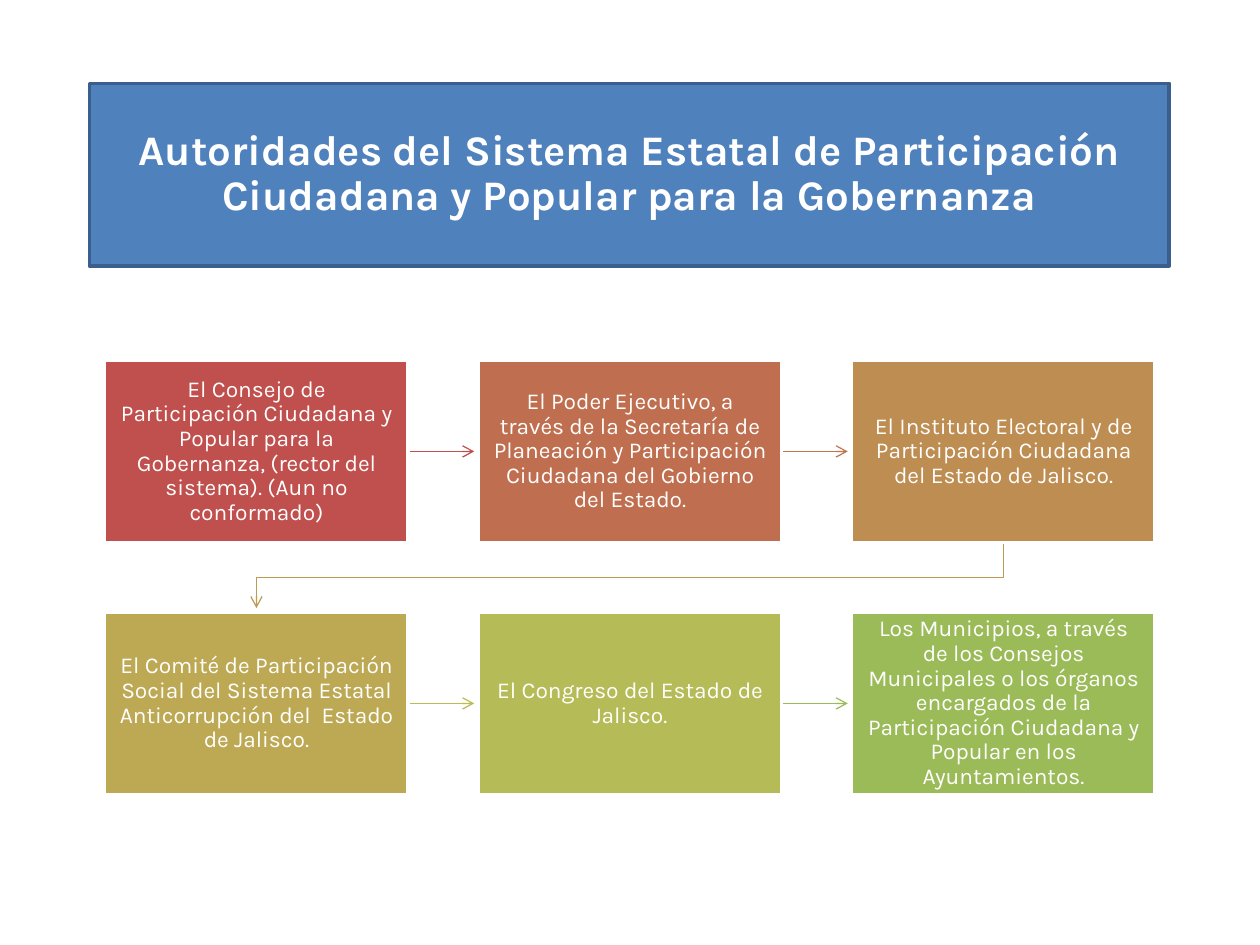
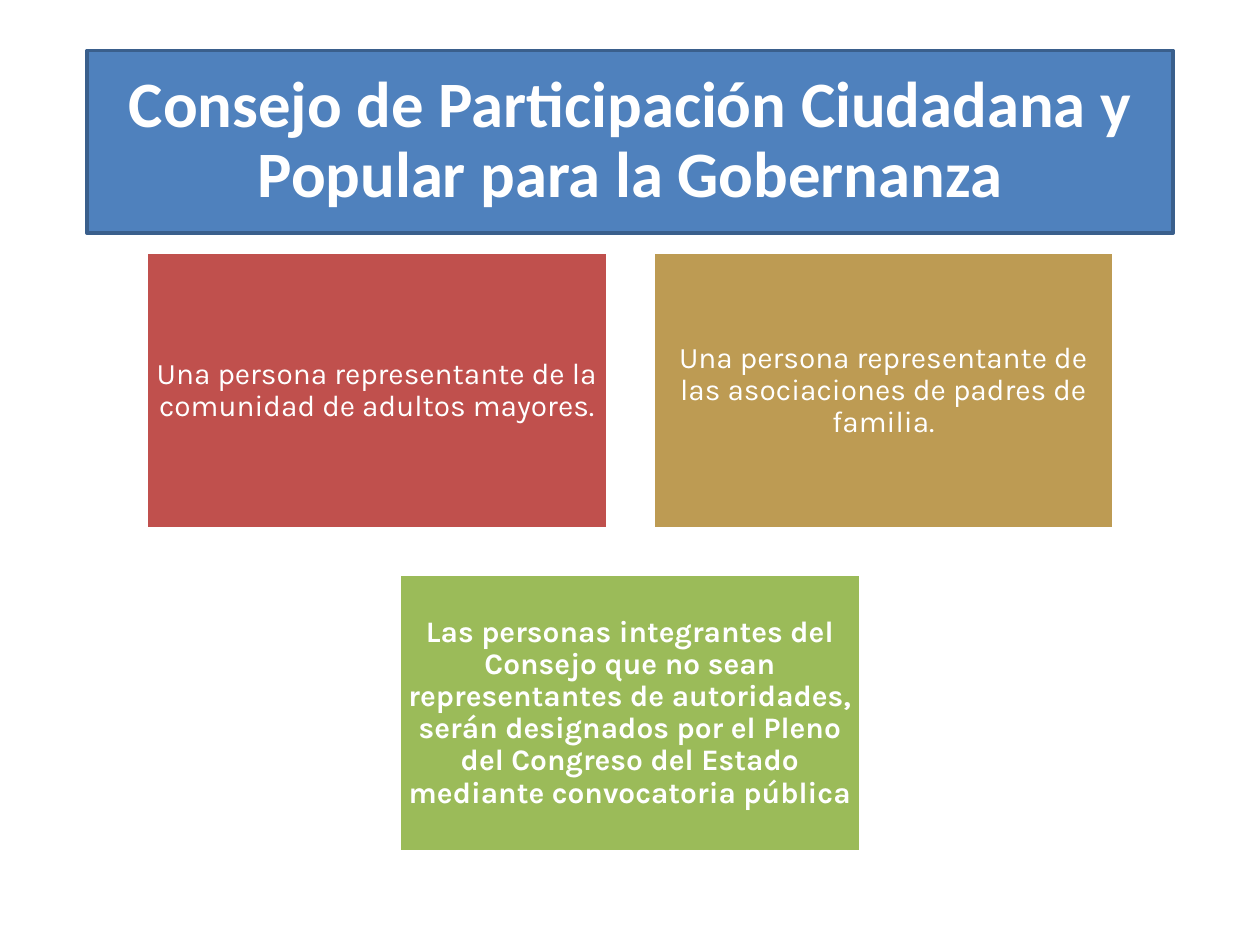
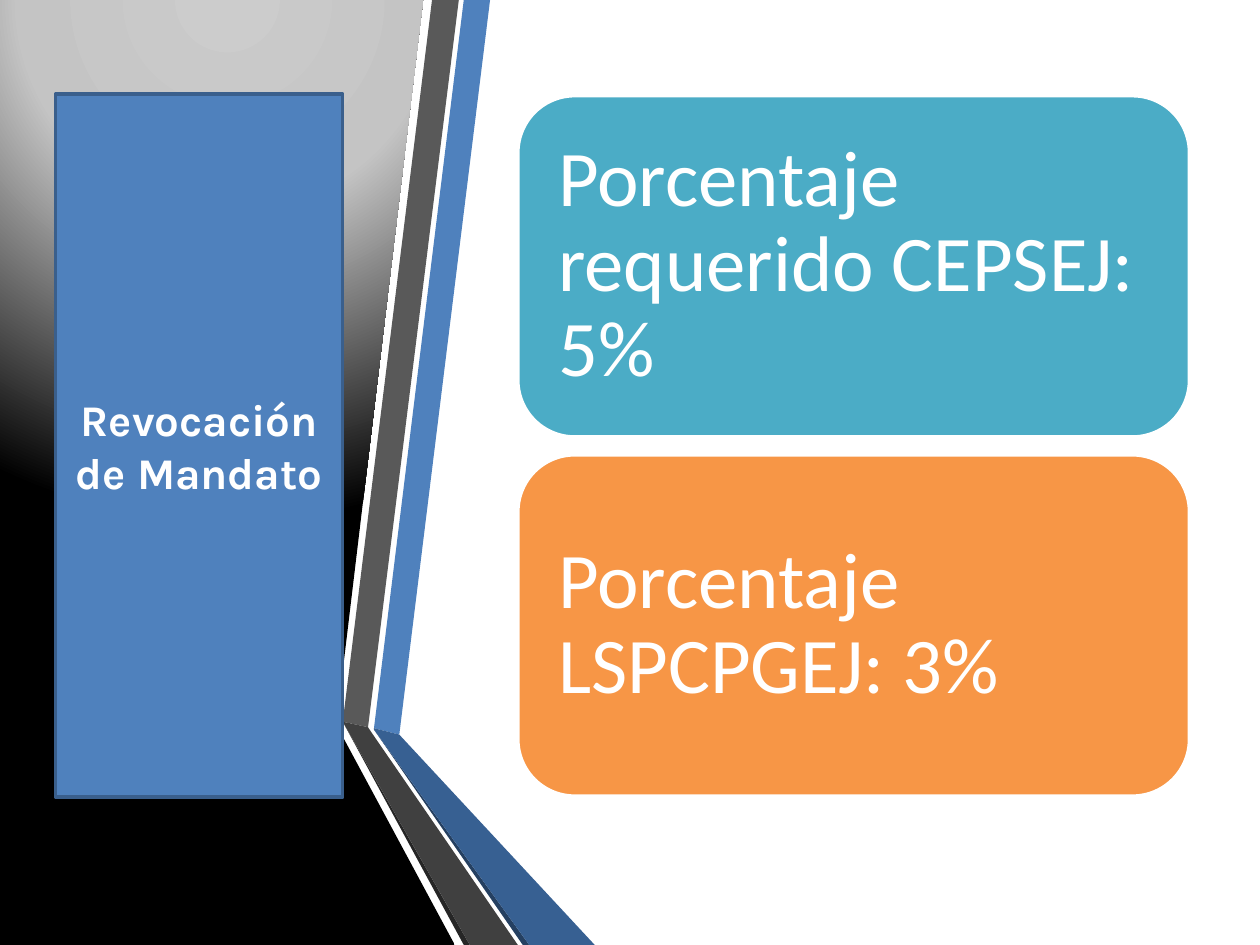
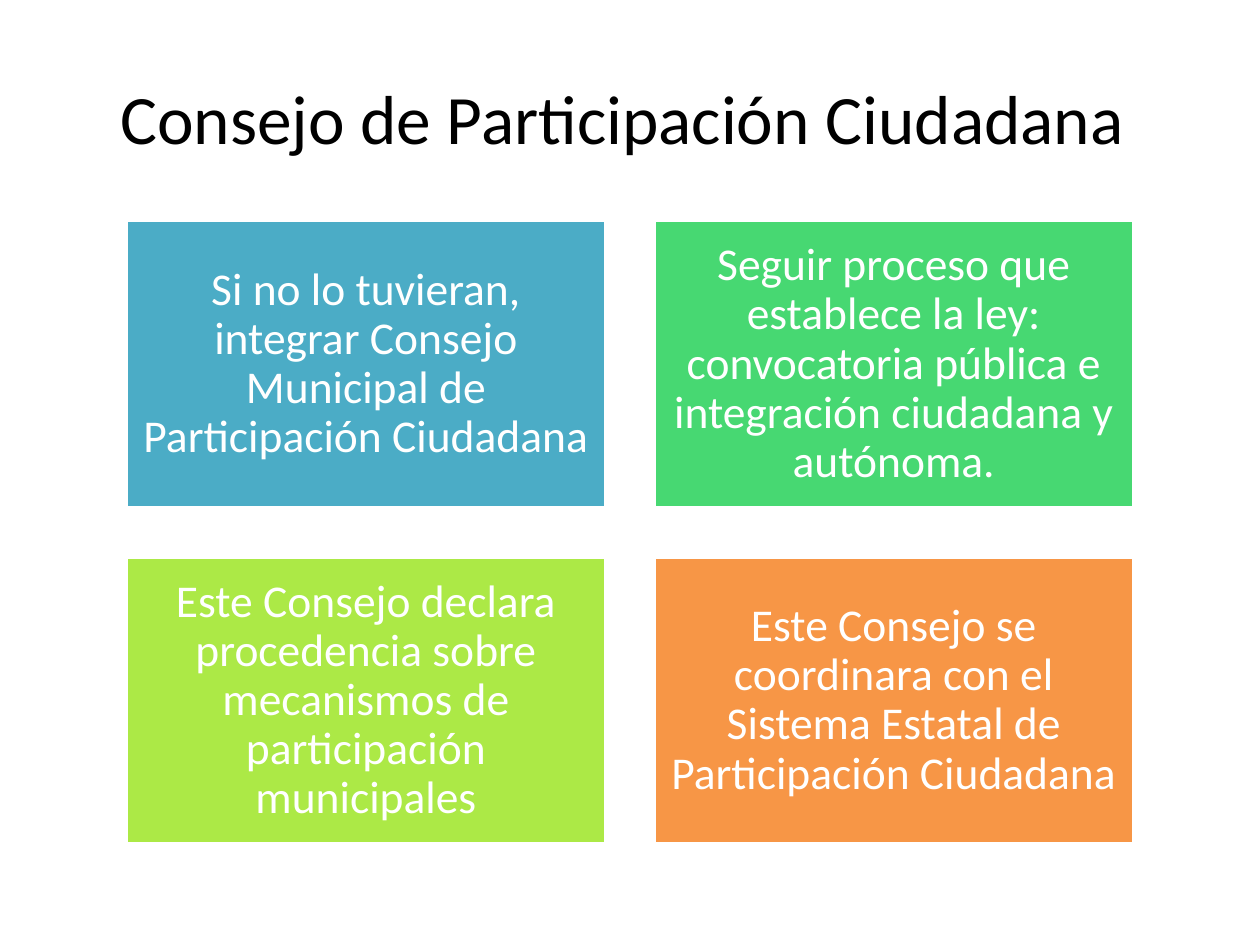
from pptx import Presentation
from pptx.dml.color import RGBColor
from pptx.enum.shapes import MSO_CONNECTOR, MSO_SHAPE
from pptx.enum.text import MSO_ANCHOR, MSO_AUTO_SIZE, PP_ALIGN
from pptx.oxml import parse_xml
from pptx.oxml.ns import nsdecls, qn
from pptx.oxml.xmlchemy import OxmlElement
from pptx.util import Cm, Pt

WHITE = RGBColor(0xFF, 0xFF, 0xFF)
BLACK = RGBColor(0x00, 0x00, 0x00)
BLUE = RGBColor(0x4F, 0x81, 0xBD)
EDGE = RGBColor(0x3A, 0x5F, 0x8C)
DEEP = RGBColor(0x37, 0x60, 0x92)
NAVY = RGBColor(0x25, 0x40, 0x61)
GREY = RGBColor(0x59, 0x59, 0x59)
SLATE = RGBColor(0x40, 0x40, 0x40)
COAL = RGBColor(0x26, 0x26, 0x26)
RED = RGBColor(0xC0, 0x50, 0x4D)
RUST = RGBColor(0xBF, 0x6F, 0x4F)
CLAY = RGBColor(0xBF, 0x77, 0x50)
BRONZE = RGBColor(0xBE, 0x8D, 0x52)
GOLD = RGBColor(0xBD, 0x9B, 0x53)
SAND = RGBColor(0xBD, 0xA9, 0x54)
MOSS = RGBColor(0xB5, 0xBC, 0x57)
STRAW = RGBColor(0xBC, 0xBC, 0x56)
GREEN = RGBColor(0x9B, 0xBB, 0x59)
TEAL = RGBColor(0x4B, 0xAC, 0xC6)
MINT = RGBColor(0x47, 0xD8, 0x72)
LIME = RGBColor(0xAC, 0xE9, 0x46)
ORANGE = RGBColor(0xF7, 0x96, 0x46)
KARLA, CALIBRI = "Karla", "Calibri"


def write(frame, text, size, font=KARLA, color=WHITE, bold=False,
          align=PP_ALIGN.CENTER, space=0.9, inset=None):
    frame.word_wrap = True
    frame.auto_size = MSO_AUTO_SIZE.NONE
    frame.vertical_anchor = MSO_ANCHOR.MIDDLE
    if inset is not None:
        frame.margin_left = frame.margin_right = Cm(inset)
        frame.margin_top = frame.margin_bottom = Cm(inset)
    para = frame.paragraphs[0]
    para.alignment = align
    para.line_spacing = space
    run = para.add_run()
    run.text = text
    run.font.size = Pt(size)
    run.font.name = font
    run.font.bold = bold
    run.font.color.rgb = color


def card(slide, spot, text, hue, kind=MSO_SHAPE.RECTANGLE, **style):
    """Add a filled box with a white edge; spot is left, top, width, height in cm."""
    shape = slide.shapes.add_shape(kind, *map(Cm, spot))
    shape.shadow.inherit = False
    shape.fill.solid()
    shape.fill.fore_color.rgb = hue
    shape.line.color.rgb = WHITE
    shape.line.width = Pt(2)
    write(shape.text_frame, text, **style)


deck = Presentation()
deck.slide_width, deck.slide_height = Cm(25.4), Cm(19.05)

# Titles of all slides
HEADS = [
    ((1.8, 1.68, 21.77, 3.68),
     "Autoridades del Sistema Estatal de Participación Ciudadana y Popular para la Gobernanza",
     BLUE, dict(size=24, bold=True)),
    ((1.75, 1.02, 21.9, 3.68),
     "Consejo de Participación Ciudadana y Popular para la Gobernanza",
     BLUE, dict(size=37, bold=True, font=CALIBRI)),
    ((1.12, 1.9, 5.79, 14.17), "Revocación de Mandato",
     BLUE, dict(size=25, bold=True, space=1)),
    ((1.27, 0.76, 22.86, 3.18), "Consejo de Participación Ciudadana ",
     None, dict(size=39.6, font=CALIBRI, color=BLACK, space=1)),
]
for spot, text, hue, style in HEADS:
    slide = deck.slides.add_slide(deck.slide_layouts[5])
    title = slide.shapes.title
    title.left, title.top, title.width, title.height = map(Cm, spot)
    if hue is not None:
        title.fill.solid()
        title.fill.fore_color.rgb = hue
        title.line.color.rgb = EDGE
        title.line.width = Pt(2)
    write(title.text_frame, text, **style)
bodies, council, recall, local = deck.slides

# Slide 1: six authorities in two rows, linked in order
LEFT, TOP, WIDE, HIGH, STEP, DROP = 2.11, 7.26, 6.12, 3.68, 7.53, 5.08
BODIES = [
    ("El Consejo de Participación Ciudadana y Popular para la Gobernanza, "
     "(rector del sistema). (Aun no conformado)", RED, RED),
    ("El Poder Ejecutivo, a través de la Secretaría de Planeación y "
     "Participación Ciudadana del Gobierno del Estado.", RUST, CLAY),
    ("El Instituto Electoral y de Participación Ciudadana del Estado de Jalisco.",
     BRONZE, GOLD),
    ("El Comité de Participación Social del Sistema Estatal Anticorrupción "
     "del  Estado de Jalisco.", SAND, STRAW),
    ("El Congreso del Estado de Jalisco.", MOSS, GREEN),
    ("Los Municipios, a través de los Consejos Municipales o los órganos encargados "
     "de la Participación Ciudadana y Popular en los Ayuntamientos.", GREEN, None),
]
for i, (text, hue, tint) in enumerate(BODIES):
    row, col = divmod(i, 3)
    x, y = LEFT + col * STEP, TOP + row * DROP
    if tint is not None:
        if col < 2:
            mid = y + HIGH / 2
            link = bodies.shapes.add_connector(
                MSO_CONNECTOR.STRAIGHT, Cm(x + WIDE), Cm(mid), Cm(x + STEP - 0.08), Cm(mid))
        else:
            start, end, base = x + WIDE / 2, LEFT + WIDE / 2, y + HIGH
            pen = bodies.shapes.build_freeform(Cm(start), Cm(base))
            turns = [(start, base + 0.71), (end, base + 0.71), (end, base + 1.32)]
            pen.add_line_segments([(Cm(a), Cm(b)) for a, b in turns], close=False)
            link = pen.convert_to_shape()
            link.fill.background()
        link.line.color.rgb = tint
        link.line.width = Pt(0.75)
        props = link._element.spPr
        tip = OxmlElement("a:tailEnd")
        tip.set("type", "arrow")
        props.find(qn("a:ln")).append(tip)
        props.append(OxmlElement("a:effectLst"))
    card(bodies, (x, y, WIDE, HIGH), text, hue, size=13, inset=0.3)

# Slide 2: members of the council
MEMBERS = [
    (2.95, 5.08, "Una persona representante de la comunidad de adultos mayores.", RED, False),
    (13.16, 5.08, "Una persona representante de las asociaciones de padres de familia.",
     GOLD, False),
    (8.05, 11.58, "Las personas integrantes del Consejo que no sean representantes de "
     "autoridades, serán designados por el Pleno del Congreso del Estado mediante "
     "convocatoria pública ", GREEN, True),
]
for x, y, text, hue, bold in MEMBERS:
    card(council, (x, y, 9.3, 5.59), text, hue, size=17, bold=bold, inset=0.18)

# Slide 3: folded ribbons behind the title, percentages at the right
FOLDS = [
    (None, [(0, 0), (8.53, 0), (6.78, 14.61), (9.17, 19.05), (0, 19.05)]),
    (BLUE, [(7.54, 14.68), (8.05, 14.81), (9.88, 0), (9.35, 0)]),
    (GREY, [(9.25, 0), (8.71, 0), (6.91, 14.55), (7.42, 14.66)]),
    (COAL, [(6.91, 14.55), (9.35, 19.05), (9.47, 19.05)]),
    (NAVY, [(7.54, 14.71), (10.54, 19.05), (10.67, 19.05)]),
    (DEEP, [(7.54, 14.71), (10.67, 19.05), (11.99, 19.05), (8.05, 14.81), (7.54, 14.68)]),
    (SLATE, [(10.44, 19.05), (7.52, 14.81), (7.42, 14.66), (6.91, 14.55), (9.47, 19.05)]),
]
GLOW = f"""<a:gradFill {nsdecls('a')} rotWithShape="1"><a:gsLst>
<a:gs pos="0"><a:srgbClr val="CCCCCC"/></a:gs>
<a:gs pos="40000"><a:srgbClr val="C4C4C4"/></a:gs>
<a:gs pos="100000"><a:srgbClr val="000000"/></a:gs></a:gsLst>
<a:path path="circle"><a:fillToRect l="50000" t="-80000" r="50000" b="180000"/></a:path>
</a:gradFill>"""
for hue, points in FOLDS:
    first, *rest = [(Cm(a), Cm(b)) for a, b in points]
    pen = recall.shapes.build_freeform(*first)
    pen.add_line_segments(rest)
    fold = pen.convert_to_shape()
    fold.shadow.inherit = False
    fold.line.fill.background()
    if hue is None:
        fold.fill.background()
        props = fold._element.spPr
        props.replace(props.find(qn("a:noFill")), parse_xml(GLOW))
    else:
        fold.fill.solid()
        fold.fill.fore_color.rgb = hue
recall.shapes._spTree.append(recall.shapes.title._element)

SHARES = [("Porcentaje requerido CEPSEJ: 5%", TEAL), ("Porcentaje LSPCPGEJ: 3%", ORANGE)]
for i, (text, hue) in enumerate(SHARES):
    card(recall, (10.44, 1.93 + i * 7.24, 13.54, 6.88), text, hue,
         MSO_SHAPE.ROUNDED_RECTANGLE, size=45, font=CALIBRI,
         align=PP_ALIGN.LEFT, inset=0.48)

# Slide 4: steps for the local council
STEPS = [
    ("Si no lo tuvieran, integrar Consejo Municipal de Participación Ciudadana", TEAL),
    ("Seguir proceso que establece la ley: convocatoria pública e integración "
     "ciudadana y autónoma.", MINT),
    ("Este Consejo declara procedencia sobre mecanismos de participación municipales", LIME),
    ("Este Consejo se coordinara con el Sistema Estatal de Participación Ciudadana", ORANGE),
]
for i, (text, hue) in enumerate(STEPS):
    row, col = divmod(i, 2)
    card(local, (2.54 + col * 10.64, 4.45 + row * 6.78, 9.68, 5.79), text, hue,
         size=26, font=CALIBRI, inset=0.28)

deck.save("out.pptx")
